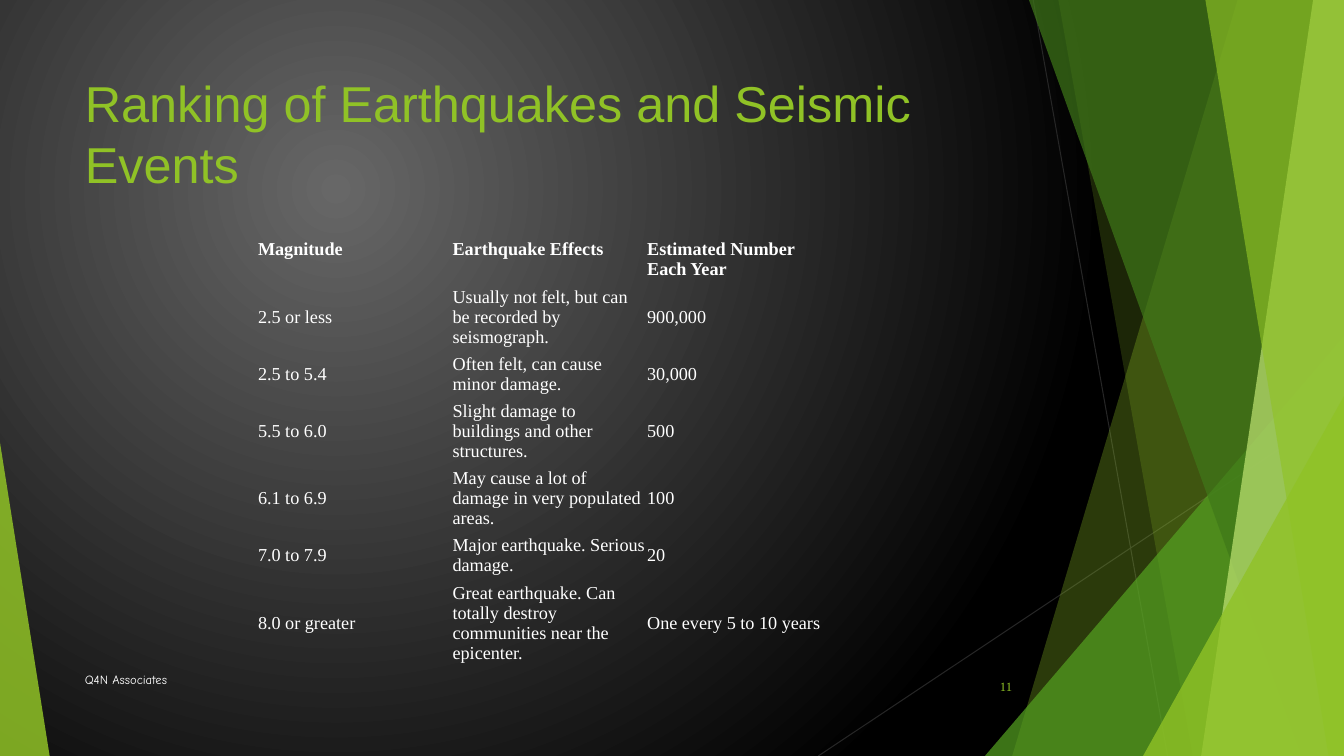
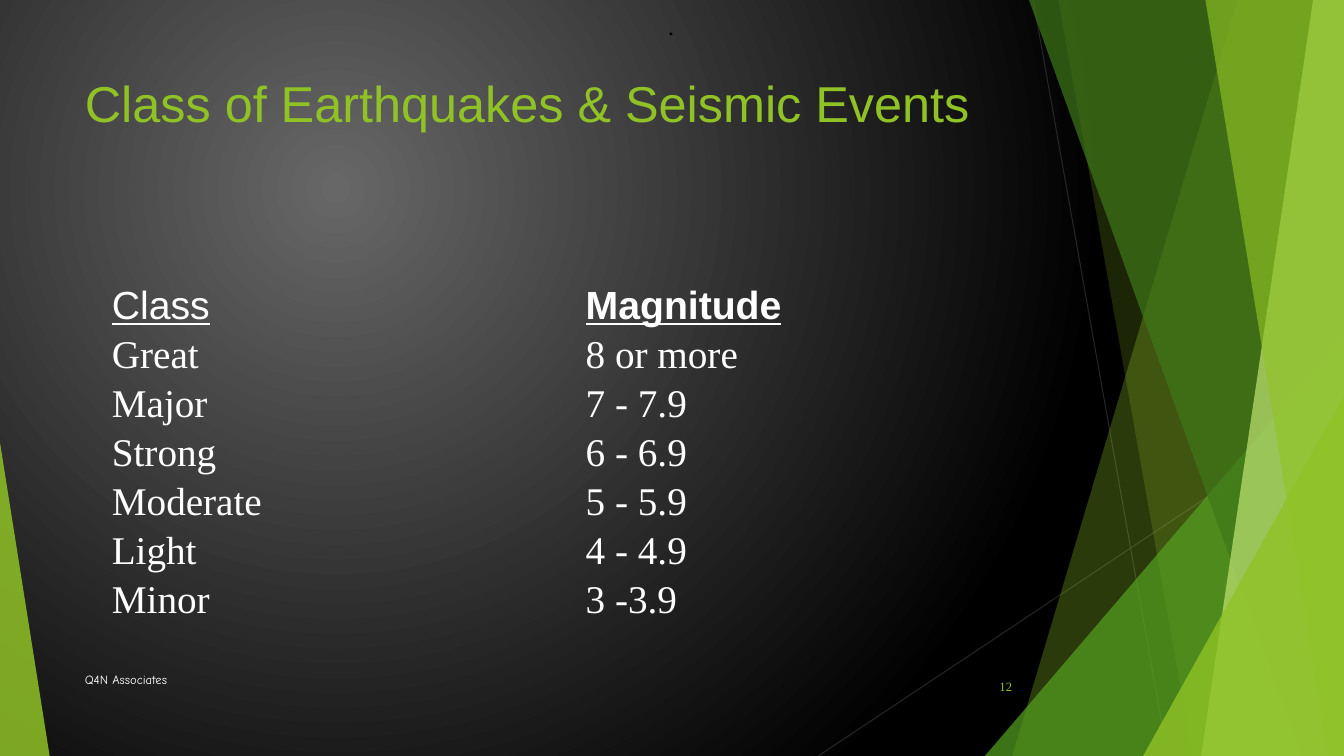
from dataclasses import dataclass

from lxml.etree import SubElement
from pptx import Presentation
from pptx.dml.color import RGBColor
from pptx.enum.shapes import MSO_CONNECTOR, MSO_SHAPE
from pptx.enum.text import MSO_ANCHOR, PP_ALIGN
from pptx.oxml.ns import qn
from pptx.util import Pt

WIDTH, HEIGHT = 960, 540


@dataclass(frozen=True)
class Style:
    font: str
    size: float
    color: str
    bold: bool = False
    underline: bool = False


class Theme:
    glow, dark, hairline = "676767", "000000", "262626"
    green, leaf, forest, lime = "90C226", "54A021", "3F7819", "C0E474"
    white = "FFFFFF"
    no_table_style = "{2D5ABB26-0587-4C30-8999-92F81FD0307C}"

    title = Style("Arial", 36, green)
    footer = Style("Comic Neue", 9, white)
    number = Style("Times New Roman", 9, green)
    dot = Style("Times New Roman", 18, dark)
    effects = Style("Times New Roman", 13, white)
    effects_head = Style("Times New Roman", 13, white, bold=True)
    classes = Style("Times New Roman", 28, white)
    class_head = Style("Arial", 28, white, underline=True)
    magnitude_head = Style("Arial", 28, white, bold=True, underline=True)


FOOTER = "Q4N Associates"

HAIRLINES = [(738, 0, 834, 540), (960, 290, 584.5, 540)]

# Bands run to the right edge: (left at top, left at bottom).
# Triangles stand on the bottom edge: (left, top, width, apex).
FACETS = [
    ("band", (884, 723), Theme.green, 30),
    ("band", (756, 852), Theme.green, 20),
    ("triangle", (703.5, 240, 256.5, 1), Theme.leaf, 72),
    ("band", (735, 929.5), Theme.forest, 70),
    ("band", (938, 858), Theme.lime, 70),
    ("band", (861, 949), Theme.green, 65),
    ("triangle", (816.5, 283, 143.5, 1), Theme.green, 80),
    ("triangle", (0, 316, 35.5, 0), Theme.green, 85),
]

EFFECTS = [
    ("Magnitude", "Earthquake Effects", "Estimated Number\nEach Year"),
    ("2.5 or less", "Usually not felt, but can be recorded by seismograph.", "900,000"),
    ("2.5 to 5.4", "Often felt, can cause minor damage.", "30,000"),
    ("5.5 to 6.0", "Slight damage to buildings and other structures.", "500"),
    ("6.1 to 6.9", "May cause a lot of damage in very populated areas.", "100"),
    ("7.0 to 7.9", "Major earthquake. Serious damage.", "20"),
    ("8.0 or greater",
     "Great earthquake. Can totally destroy communities near the epicenter.",
     "One every 5 to 10 years"),
]
EFFECTS_LINES = [2, 3, 2, 3, 3, 2, 4]
EFFECTS_LINE_HEIGHT = 16.08

CLASSES = [
    ("Class", "Magnitude"),
    ("Great", "8 or more"),
    ("Major", "7 - 7.9"),
    ("Strong", "6 - 6.9"),
    ("Moderate", "5 - 5.9"),
    ("Light", "4 - 4.9"),
    ("Minor", "3 -3.9"),
]
CLASSES_ROW_HEIGHT = 32.4


def rgb(color):
    return RGBColor.from_string(color)


def write(tf, text, style, align=PP_ALIGN.LEFT):
    p = tf.paragraphs[0]
    p.alignment = align
    for i, line in enumerate(text.split("\n")):
        if i:
            p.add_line_break()
        r = p.add_run()
        r.text = line
        r.font.name = style.font
        r.font.size = Pt(style.size)
        r.font.color.rgb = rgb(style.color)
        r.font.bold = style.bold
        r.font.underline = style.underline


def add_text(slide, box, text, style, align=PP_ALIGN.LEFT,
             anchor=MSO_ANCHOR.MIDDLE, wrap=True):
    tf = slide.shapes.add_textbox(*map(Pt, box)).text_frame
    tf.word_wrap = wrap
    tf.vertical_anchor = anchor
    write(tf, text, style, align)


def set_background(master):
    """Radial glow, brightest in the upper left."""
    fill = master.background.fill
    fill.gradient()
    for stop, color in zip(fill.gradient_stops, (Theme.glow, Theme.dark)):
        stop.color.rgb = rgb(color)
    lin = next(master.element.iter(qn("a:lin")))
    grad = lin.getparent()
    grad.remove(lin)
    circle = SubElement(grad, qn("a:path"), path="circle")
    SubElement(circle, qn("a:fillToRect"),
               l="50000", t="50000", r="100000", b="100000")


def add_band(slide, top_left, bottom_left):
    corners = [(top_left, 0), (WIDTH, 0), (WIDTH, HEIGHT), (bottom_left, HEIGHT)]
    points = [(Pt(x), Pt(y)) for x, y in corners]
    builder = slide.shapes.build_freeform(*points[0])
    builder.add_line_segments(points[1:], close=True)
    return builder.convert_to_shape()


def add_triangle(slide, left, top, width, apex):
    sp = slide.shapes.add_shape(MSO_SHAPE.ISOSCELES_TRIANGLE, Pt(left), Pt(top),
                                Pt(width), Pt(HEIGHT - top))
    sp.adjustments[0] = apex
    return sp


def add_facets(slide):
    for ends in HAIRLINES:
        line = slide.shapes.add_connector(MSO_CONNECTOR.STRAIGHT, *map(Pt, ends))
        line.line.color.rgb = rgb(Theme.hairline)
        line.line.width = Pt(0.75)
        SubElement(line.element.spPr, qn("a:effectLst"))
    makers = {"band": add_band, "triangle": add_triangle}
    for kind, geometry, color, opacity in FACETS:
        sp = makers[kind](slide, *geometry)
        sp.shadow.inherit = False
        sp.line.fill.background()
        sp.fill.solid()
        sp.fill.fore_color.rgb = rgb(color)
        tint = next(sp.element.spPr.iter(qn("a:srgbClr")))
        SubElement(tint, qn("a:alpha"), val=str(opacity * 1000))


def add_slide(prs, title, number):
    slide = prs.slides.add_slide(prs.slide_layouts[6])
    add_facets(slide)
    add_text(slide, (53.5, 48, 676.5, 104), title, Theme.title,
             anchor=MSO_ANCHOR.TOP)
    add_text(slide, (53.5, 471, 496, 28.8), FOOTER, Theme.footer)
    add_text(slide, (676, 476, 54, 28.8), str(number), Theme.number,
             align=PP_ALIGN.RIGHT)
    return slide


def add_grid(slide, left, top, width, heights, rows, head_styles, body_style,
             head_anchor):
    """Add a plain table with equal columns and no fills or borders."""
    columns = len(rows[0])
    frame = slide.shapes.add_table(len(rows), columns, Pt(left), Pt(top),
                                   Pt(width), Pt(sum(heights)))
    table = frame.table
    table.first_row = table.horz_banding = False
    next(frame.element.iter(qn("a:tableStyleId"))).text = Theme.no_table_style
    for column in table.columns:
        column.width = Pt(width / columns)
    for i, (row, height) in enumerate(zip(rows, heights)):
        table.rows[i].height = Pt(height)
        styles = [body_style] * columns if i else head_styles
        for j, (text, style) in enumerate(zip(row, styles)):
            cell = table.cell(i, j)
            cell.fill.background()
            cell.margin_left = cell.margin_right = Pt(0.72)
            cell.margin_top = cell.margin_bottom = Pt(0.72)
            cell.vertical_anchor = MSO_ANCHOR.MIDDLE if i else head_anchor
            write(cell.text_frame, text, style)


def main():
    prs = Presentation()
    prs.slide_width, prs.slide_height = Pt(WIDTH), Pt(HEIGHT)
    set_background(prs.slide_master)

    ranking = add_slide(prs, "Ranking of Earthquakes and Seismic Events", 11)
    add_grid(ranking, 183.6, 170, 417,
             [n * EFFECTS_LINE_HEIGHT for n in EFFECTS_LINES], EFFECTS,
             [Theme.effects_head] * 3, Theme.effects, MSO_ANCHOR.TOP)

    classes = add_slide(prs, "Class of Earthquakes & Seismic Events", 12)
    add_grid(classes, 79.2, 201, 677, [CLASSES_ROW_HEIGHT] * len(CLASSES), CLASSES,
             [Theme.class_head, Theme.magnitude_head], Theme.classes,
             MSO_ANCHOR.MIDDLE)
    add_text(classes, (470, 3.6, 19.5, 28.8), ".", Theme.dot,
             align=PP_ALIGN.JUSTIFY, wrap=False)

    prs.save("out.pptx")


if __name__ == "__main__":
    main()
